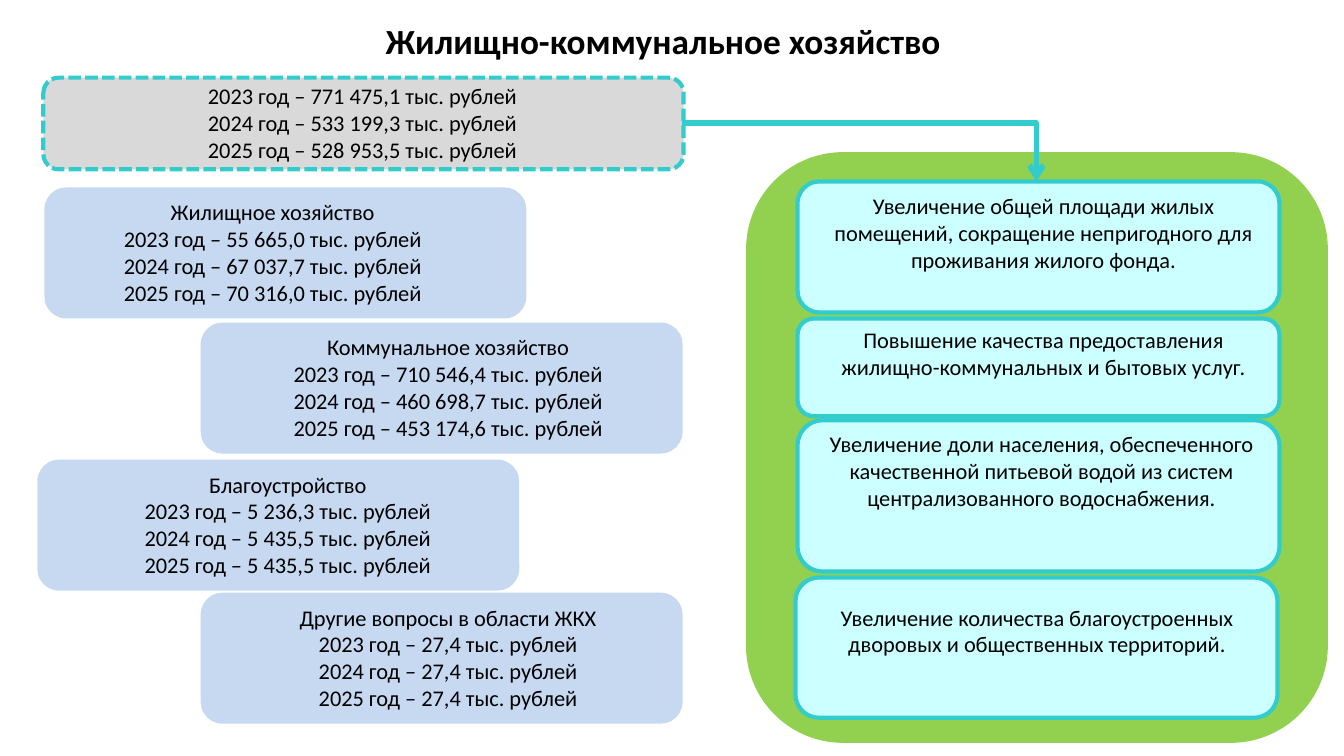
from lxml.etree import SubElement
from pptx import Presentation
from pptx.dml.color import RGBColor
from pptx.enum.dml import MSO_LINE
from pptx.enum.shapes import MSO_CONNECTOR, MSO_SHAPE
from pptx.enum.text import MSO_ANCHOR, MSO_AUTO_SIZE, PP_ALIGN
from pptx.oxml.ns import qn
from pptx.util import Inches, Pt

TITLE = "Жилищно-коммунальное хозяйство"
YEARS = (2023, 2024, 2025)
TOTAL = ("771 475,1", "533 199,3", "528 953,5")

# Budget cards: name, sums by year, card left and top, text left
CARDS = [
    ("Жилищное хозяйство", ("55 665,0", "67 037,7", "70 316,0"), 0.44, 1.86, 0.29),
    ("Коммунальное хозяйство", ("710 546,4", "460 698,7", "453 174,6"), 1.99, 3.2, 2.03),
    ("Благоустройство", ("5 236,3", "5 435,5", "5 435,5"), 0.37, 4.56, 0.44),
    ("Другие вопросы в области ЖКХ", ("27,4", "27,4", "27,4"), 1.99, 5.88, 2.03),
]
# Goals: text, card left, top and height, text box
GOALS = [
    ("Увеличение общей площади жилых помещений, сокращение непригодного "
     "для проживания жилого фонда.", 7.91, 1.8, 1.3, (8.01, 1.86, 4.68, 0.91)),
    ("Повышение качества предоставления жилищно-коммунальных и бытовых услуг.",
     7.91, 3.16, 0.97, (8.01, 3.19, 4.68, 0.64)),
    ("Увеличение доли населения, обеспеченного качественной питьевой водой "
     "из систем централизованного водоснабжения.",
     7.91, 4.17, 1.5, (7.99, 4.22, 4.68, 0.91)),
    ("Увеличение количества благоустроенных дворовых и общественных территорий.",
     7.89, 5.73, 1.39, (8.09, 5.94, 4.39, 0.64)),
]
COLORS = {"green": "92D050", "aqua": "CCFFFF", "teal": "33CCCC",
          "gray": "D9D9D9", "blue": "C6D9F1", "black": "000000"}
FONT = "Calibri"
WIDE, HIGH = 4.78, 1.3  # card size
PAD = 0.06              # card top to text top


def color(name):
    return RGBColor.from_string(COLORS[name])


def add_card(box, fill, edge=None):
    card = slide.shapes.add_shape(MSO_SHAPE.ROUNDED_RECTANGLE, *map(Inches, box))
    card.shadow.inherit = False
    card.fill.solid()
    card.fill.fore_color.rgb = color(fill)
    if edge:
        card.line.color.rgb = color(edge)
        card.line.width = Pt(3)
    else:
        card.line.fill.background()
    return card


def write(frame, lines, size, bold=False):
    for i, line in enumerate(lines):
        par = frame.paragraphs[0] if i == 0 else frame.add_paragraph()
        par.alignment = PP_ALIGN.CENTER
        run = par.add_run()
        run.text = line
        run.font.name = FONT
        run.font.size = Pt(size)
        run.font.bold = bold
        run.font.color.rgb = color("black")


def add_text(box, lines):
    frame = slide.shapes.add_textbox(*map(Inches, box)).text_frame
    frame.word_wrap = True
    frame.auto_size = MSO_AUTO_SIZE.SHAPE_TO_FIT_TEXT
    write(frame, lines, 16)


def by_year(sums):
    return [f"{year} год – {num} тыс. рублей" for year, num in zip(YEARS, sums)]


deck = Presentation()
deck.slide_width, deck.slide_height = Inches(13.33), Inches(7.5)
slide = deck.slides.add_slide(deck.slide_layouts[5])

# Title
title = slide.shapes.title
title.left, title.top, title.width, title.height = map(Inches, (0.58, 0.13, 12, 0.55))
title.text_frame.vertical_anchor = MSO_ANCHOR.MIDDLE
write(title.text_frame, [TITLE], 25.2, True)

# Total spending
total = add_card((0.43, 0.77, 6.35, 0.91), "gray", "teal")
total.line.dash_style = MSO_LINE.SQUARE_DOT
add_text((1.12, 0.77, 4.95, 0.91), by_year(TOTAL))

# Spending by part
for name, sums, left, top, inset in CARDS:
    add_card((left, top, WIDE, HIGH), "blue")
    add_text((inset, top + PAD, 4.83, 1.18), [name] + by_year(sums))

# Goals on the green panel
add_card((7.4, 1.51, 5.77, 5.86), "green")
for goal, left, top, high, box in GOALS:
    add_card((left, top, WIDE, high), "aqua", "teal")
    add_text(box, [goal])

# Arrow from total to goals: one bend, right then down
arrow = slide.shapes.add_connector(
    MSO_CONNECTOR.ELBOW, *map(Inches, (6.76, 1.22, 10.28, 1.8)))
arrow.line.color.rgb = color("teal")
arrow.line.width = Pt(3.75)
props = arrow.element.spPr
props.find(qn("a:prstGeom")).set("prst", "bentConnector2")
SubElement(props.find(qn("a:ln")), qn("a:tailEnd"), type="arrow")
SubElement(props, qn("a:effectLst"))

deck.save("out.pptx")
